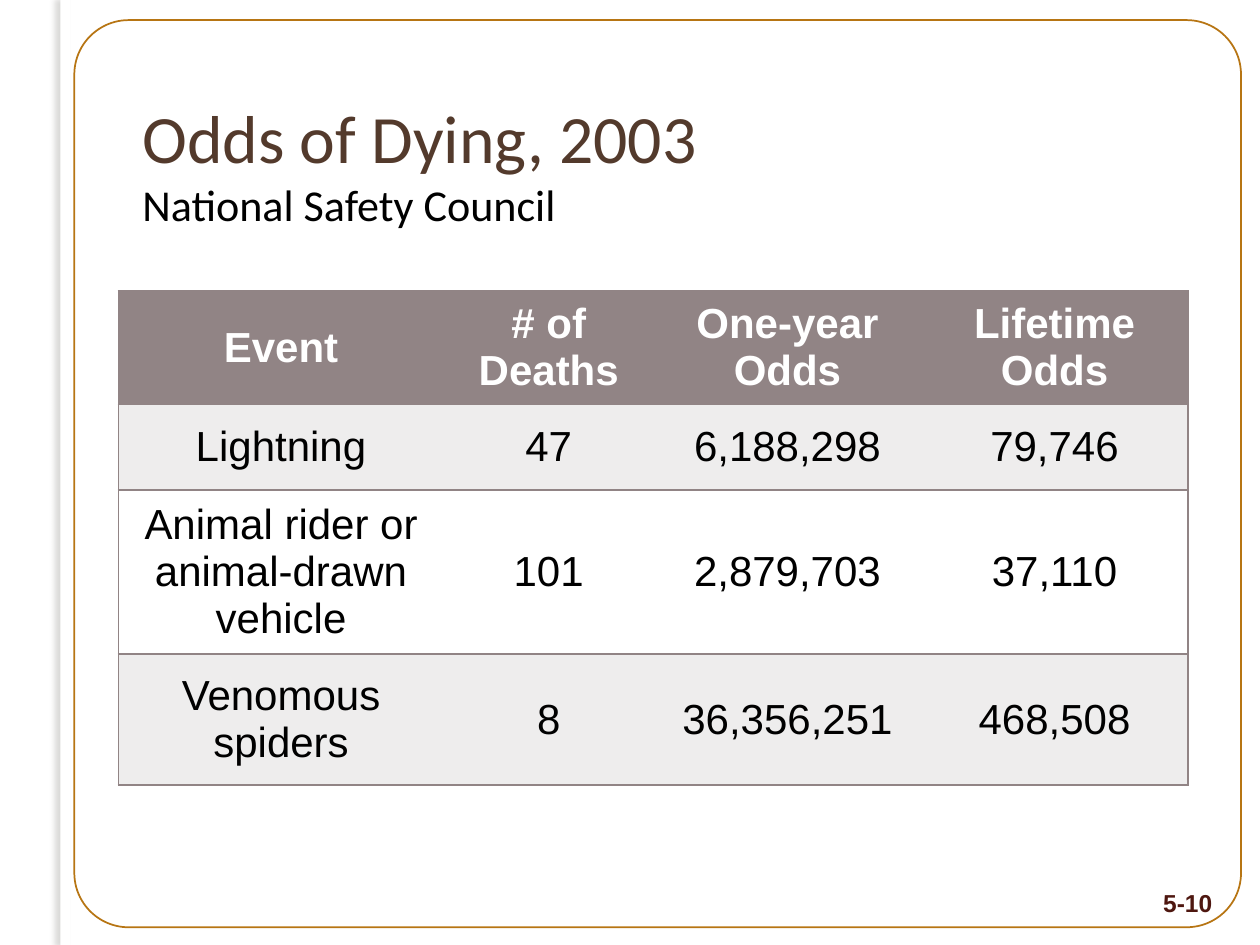
from dataclasses import dataclass

from lxml.etree import SubElement
from pptx import Presentation
from pptx.dml.color import RGBColor as RGB
from pptx.enum.shapes import MSO_SHAPE as Preset
from pptx.enum.text import MSO_ANCHOR as Anchor, PP_ALIGN as Align
from pptx.oxml.ns import qn
from pptx.util import Inches, Pt


@dataclass(frozen=True)
class Theme:
    heading_font: str = "Calibri"
    body_font: str = "Arial"
    heading: str = "533A2C"
    ink: str = "000000"
    paper: str = "FFFFFF"
    frame: str = "B77513"
    shade: str = "74726D"
    header: str = "918485"
    band: str = "EEEDED"
    page: str = "4E1710"
    title_size: float = 38.7
    subtitle_size: float = 25.2
    table_size: float = 24
    page_size: float = 14


THEME = Theme()
ODDS = [
    ("Event", "# of Deaths", "One-year Odds", "Lifetime Odds"),
    ("Lightning", "47", "6,188,298", "79,746"),
    ("Animal rider or animal-drawn vehicle", "101", "2,879,703", "37,110"),
    ("Venomous spiders", "8", "36,356,251", "468,508"),
]
COLUMN_WIDTHS = (2.58, 1.67, 2.12, 2.12)
ROW_HEIGHTS = (0.83, 0.68, 1.13, 1.04)


def add_run(paragraph, text, font, size, color, bold=False):
    run = paragraph.add_run()
    run.text = text
    run.font.name = font
    run.font.size = Pt(size)
    run.font.bold = bold
    run.font.color.rgb = RGB.from_string(color)


def add_color(parent, color, alpha=None):
    """Append a colour element, optionally with an opacity in percent."""
    value = SubElement(parent, qn("a:srgbClr"), val=color)
    if alpha is not None:
        SubElement(value, qn("a:alpha"), val=str(alpha * 1000))


def set_border(cell, side, color=None):
    """Draw one cell edge, or clear it when no colour is given."""
    edge = SubElement(cell._tc.get_or_add_tcPr(), qn(f"a:ln{side}"),
                      w=str(Pt(1)))
    if color:
        add_color(SubElement(edge, qn("a:solidFill")), color)
    else:
        SubElement(edge, qn("a:noFill"))


# Left strip with its soft shadow
def add_strip(slide, box):
    strip = slide.shapes.add_shape(Preset.RECTANGLE, *box)
    strip.fill.solid()
    strip.fill.fore_color.rgb = RGB.from_string(THEME.paper)
    strip.line.fill.background()
    effects = SubElement(strip._element.spPr, qn("a:effectLst"))
    shadow = SubElement(effects, qn("a:outerShdw"), blurRad=str(Pt(3)),
                        dist=str(Pt(3)), dir=str(180 * 60000),
                        algn="ctr", rotWithShape="0")
    add_color(shadow, THEME.shade, 25)


# Rounded outline around the content
def add_frame(slide, box):
    frame = slide.shapes.add_shape(Preset.ROUNDED_RECTANGLE, *box)
    frame.adjustments[0] = 0.06
    frame.shadow.inherit = False
    frame.fill.background()
    frame.line.width = Pt(1)
    frame.line.color.rgb = RGB.from_string(THEME.frame)


# Title with its source on the second line
def fill_title(slide, box):
    title = slide.shapes.title
    title.left, title.top, title.width, title.height = box
    title.text_frame.vertical_anchor = Anchor.MIDDLE
    heading = title.text_frame.paragraphs[0]
    heading.alignment = Align.LEFT
    add_run(heading, "Odds of Dying, 2003", THEME.heading_font,
            THEME.title_size, THEME.heading)
    heading.add_line_break()
    add_run(heading, "National Safety Council", THEME.heading_font,
            THEME.subtitle_size, THEME.ink)


# Table: dark header, alternating bands, horizontal rules and outer edges
def add_odds_table(slide, box):
    odds = slide.shapes.add_table(len(ODDS), len(COLUMN_WIDTHS), *box).table
    odds.first_row = odds.horz_banding = False
    for column, width in zip(odds.columns, COLUMN_WIDTHS):
        column.width = Inches(width)
    last = len(COLUMN_WIDTHS) - 1
    for r, (values, height) in enumerate(zip(ODDS, ROW_HEIGHTS)):
        odds.rows[r].height = Inches(height)
        is_header = r == 0
        fill = THEME.header if is_header else (THEME.paper, THEME.band)[r % 2]
        for c, value in enumerate(values):
            cell = odds.cell(r, c)
            set_border(cell, "L", THEME.header if c == 0 else None)
            set_border(cell, "R", THEME.header if c == last else None)
            set_border(cell, "T", THEME.header)
            set_border(cell, "B", THEME.header)
            cell.fill.solid()
            cell.fill.fore_color.rgb = RGB.from_string(fill)
            cell.vertical_anchor = Anchor.MIDDLE
            entry = cell.text_frame.paragraphs[0]
            entry.alignment = Align.CENTER
            add_run(entry, value, THEME.body_font, THEME.table_size,
                    THEME.paper if is_header else THEME.ink, is_header)


# Page number in the lower right corner
def add_page_number(slide, box):
    frame = slide.shapes.add_textbox(*box).text_frame
    frame.word_wrap = True
    number = frame.paragraphs[0]
    number.alignment = Align.RIGHT
    add_run(number, "5-10", THEME.body_font, THEME.page_size, THEME.page, True)


def inches(*lengths):
    return [Inches(length) for length in lengths]


def main():
    deck = Presentation()
    deck.slide_width, deck.slide_height = inches(10, 7.5)
    slide = deck.slides.add_slide(deck.slide_layouts[5])
    add_strip(slide, inches(0.48, 0, 0.08, 7.5))
    add_frame(slide, inches(0.59, 0.16, 9.26, 7.2))
    add_page_number(slide, inches(9.02, 7, 0.7, 0.29))
    fill_title(slide, inches(1.03, 0.67, 8.5, 1.25))
    add_odds_table(slide, inches(0.94, 2.31, 8.5, 3.92))
    deck.save("out.pptx")


if __name__ == "__main__":
    main()
